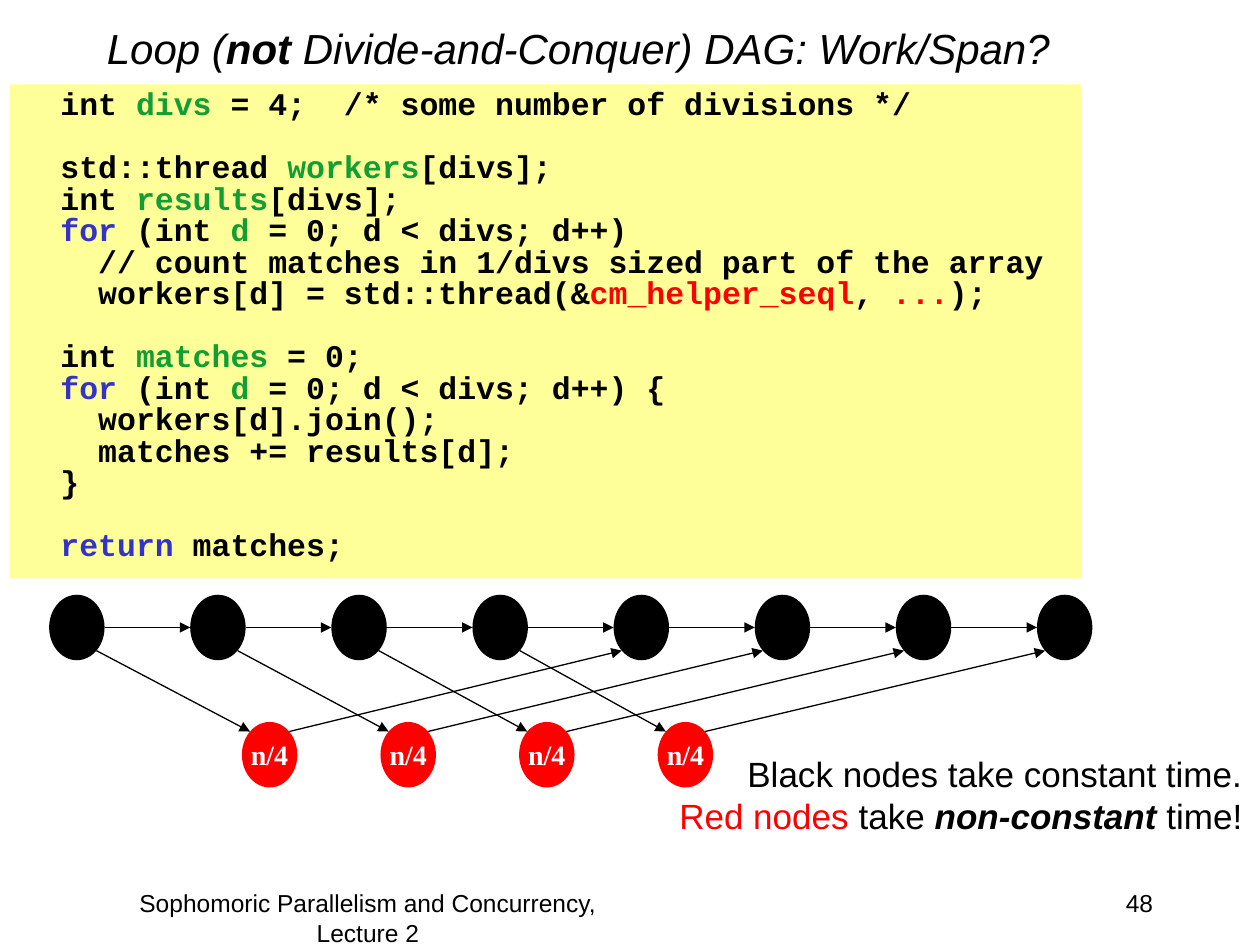
from dataclasses import dataclass
from math import sqrt

from lxml.etree import SubElement
from pptx import Presentation
from pptx.dml.color import RGBColor as RGB
from pptx.enum.shapes import MSO_CONNECTOR as Link, MSO_SHAPE as Shape
from pptx.enum.text import MSO_ANCHOR as Anchor, PP_ALIGN as Align
from pptx.oxml.ns import qn
from pptx.util import Inches, Pt


@dataclass(frozen=True)
class Theme:
    """Colours, fonts and type sizes of the slide."""
    black: RGB = RGB(0, 0, 0)
    white: RGB = RGB(255, 255, 255)
    red: RGB = RGB(255, 0, 0)
    green: RGB = RGB(0x11, 0x9F, 0x33)
    blue: RGB = RGB(0x33, 0x33, 0xCC)
    panel: RGB = RGB(0xFF, 0xFF, 0x99)
    sans: str = "Arial"
    mono: str = "Courier New"
    serif: str = "Times New Roman"
    title: Pt = Pt(24)
    note: Pt = Pt(20)
    code: Pt = Pt(18)
    node: Pt = Pt(16)
    foot: Pt = Pt(14)


T = Theme()
INKS = {"r": T.red, "g": T.green, "b": T.blue}
STEPS, TASKS = 8, 4
NODE_W, NODE_H = Inches(0.44), Inches(0.52)

CODE = """int `gdivs` = 4;  /* some number of divisions */

std::thread `gworkers`[divs];
int `gresults`[divs];
`bfor` (int `gd` = 0; d < divs; d++)
  // count matches in 1/divs sized part of the array
  workers[d] = std::thread(&`rcm_helper_seql`, `r...`);

int `gmatches` = 0;
`bfor` (int `gd` = 0; d < divs; d++) {
  workers[d].join();
  matches += results[d];
}

`breturn` matches;"""


def write(para, text, size, face=T.sans, ink=T.black, align=Align.LEFT):
    """Fill a paragraph; backticks mark parts, led by an ink key or * for bold italic."""
    para.alignment = align
    font = para.font
    font.size, font.name, font.color.rgb = size, face, ink
    for i, part in enumerate(text.split("`")):
        if not part:
            continue
        run = para.add_run()
        run.text = part[1:] if i % 2 else part
        if i % 2 and part[0] == "*":
            run.font.bold = run.font.italic = True
        elif i % 2:
            run.font.color.rgb = INKS[part[0]]


def label(slide, box, lines, size, align=Align.LEFT, wrap=True):
    """Add a text box with one paragraph per line and return its frame."""
    frame = slide.shapes.add_textbox(*box).text_frame
    frame.word_wrap = wrap
    for i, line in enumerate(lines):
        para = frame.add_paragraph() if i else frame.paragraphs[0]
        write(para, line, size, align=align)
    return frame


def solid(slide, kind, box, fill):
    """Add a flat shape without outline or shadow."""
    shape = slide.shapes.add_shape(kind, *box)
    shape.shadow.inherit = False
    shape.fill.solid()
    shape.fill.fore_color.rgb = fill
    shape.line.fill.background()
    return shape


def arrow(slide, start, end):
    """Draw a thin black arrow between two points."""
    link = slide.shapes.add_connector(Link.STRAIGHT, *start, *end)
    link.line.color.rgb = T.black
    link.line.width = Pt(0.75)
    SubElement(link.line._get_or_add_ln(), qn("a:tailEnd"), type="triangle")
    SubElement(link._element.spPr, qn("a:effectLst"))


def rim(node, dx, dy):
    """Return the point on a node's edge in direction dx, dy."""
    reach = 2 * sqrt(dx * dx + dy * dy)
    return (round(node.left + node.width * (0.5 + dx / reach)),
            round(node.top + node.height * (0.5 + dy / reach)))


def heading(slide, x, y, w, h):
    """Place the slide title."""
    text = "Loop (`*not` Divide-and-Conquer) DAG: Work/Span?"
    frame = label(slide, (x, y, w, h), [text], T.title)
    frame.vertical_anchor = Anchor.MIDDLE
    frame.paragraphs[0].font.italic = True


def listing(slide, x, y, w, h):
    """Place the code panel, with blank lines as paragraph spacing."""
    frame = solid(slide, Shape.RECTANGLE, (x, y, w, h), T.panel).text_frame
    frame.vertical_anchor = Anchor.TOP
    frame.margin_left = Inches(0.4)
    frame.word_wrap = True
    for i, block in enumerate(CODE.split("\n\n")):
        for j, line in enumerate(block.split("\n")):
            para = frame.add_paragraph() if i or j else frame.paragraphs[0]
            write(para, line, T.code, T.mono)
            para.font.bold = True
            para.line_spacing = T.code
            para.space_before = T.code if i and not j else Pt(0)


def graph(slide, x, y):
    """Place the main row of steps, the forked tasks and their arrows."""
    steps = [solid(slide, Shape.OVAL,
                   (x + i * Inches(1.12), y, NODE_W, NODE_H), T.black)
             for i in range(STEPS)]
    for a, b in zip(steps, steps[1:]):
        arrow(slide, rim(a, 1, 0), rim(b, -1, 0))
    for i in range(TASKS):
        left = x + Inches(1.53) + i * Inches(1.1)
        task = solid(slide, Shape.OVAL,
                     (left, y + Inches(1.01), NODE_W, NODE_H), T.red)
        frame = task.text_frame
        frame.word_wrap = False
        frame.vertical_anchor = Anchor.MIDDLE
        para = frame.paragraphs[0]
        write(para, "n/4", T.node, T.serif, T.white, Align.CENTER)
        para.font.bold = True
        arrow(slide, rim(steps[i], 1, 1), rim(task, -1, -1))
        arrow(slide, rim(task, 1, -1), rim(steps[i + TASKS], -1, 1))


def legend(slide, x, y, w, h):
    """Place the note on node colours."""
    lines = ["Black nodes take constant time.",
             "`rRed nodes `take `*non-constant` time!"]
    label(slide, (x, y, w, h), lines, T.note, Align.RIGHT, wrap=False)


def footer(slide, x, y, w, h):
    """Place the lecture name and the page number."""
    label(slide, (x, y, Inches(4.5), h),
          ["Sophomoric Parallelism and Concurrency, Lecture 2"],
          T.foot, Align.CENTER)
    num = Inches(2.08)
    label(slide, (x + w - num, y, num, h), ["48"], T.foot, Align.RIGHT)


def main():
    """Build the slide and save it."""
    deck = Presentation()
    deck.slide_width, deck.slide_height = Inches(10), Inches(7.5)
    slide = deck.slides.add_slide(deck.slide_layouts[6])
    heading(slide, Inches(0.75), Inches(-0.25), Inches(8.5), Inches(1.25))
    listing(slide, Inches(0.08), Inches(0.67), Inches(8.5), Inches(3.92))
    graph(slide, Inches(0.39), Inches(4.72))
    legend(slide, Inches(5.26), Inches(5.92), Inches(4.7), Inches(0.77))
    footer(slide, Inches(0.67), Inches(7), Inches(8.58), Inches(0.5))
    deck.save("out.pptx")


if __name__ == "__main__":
    main()
